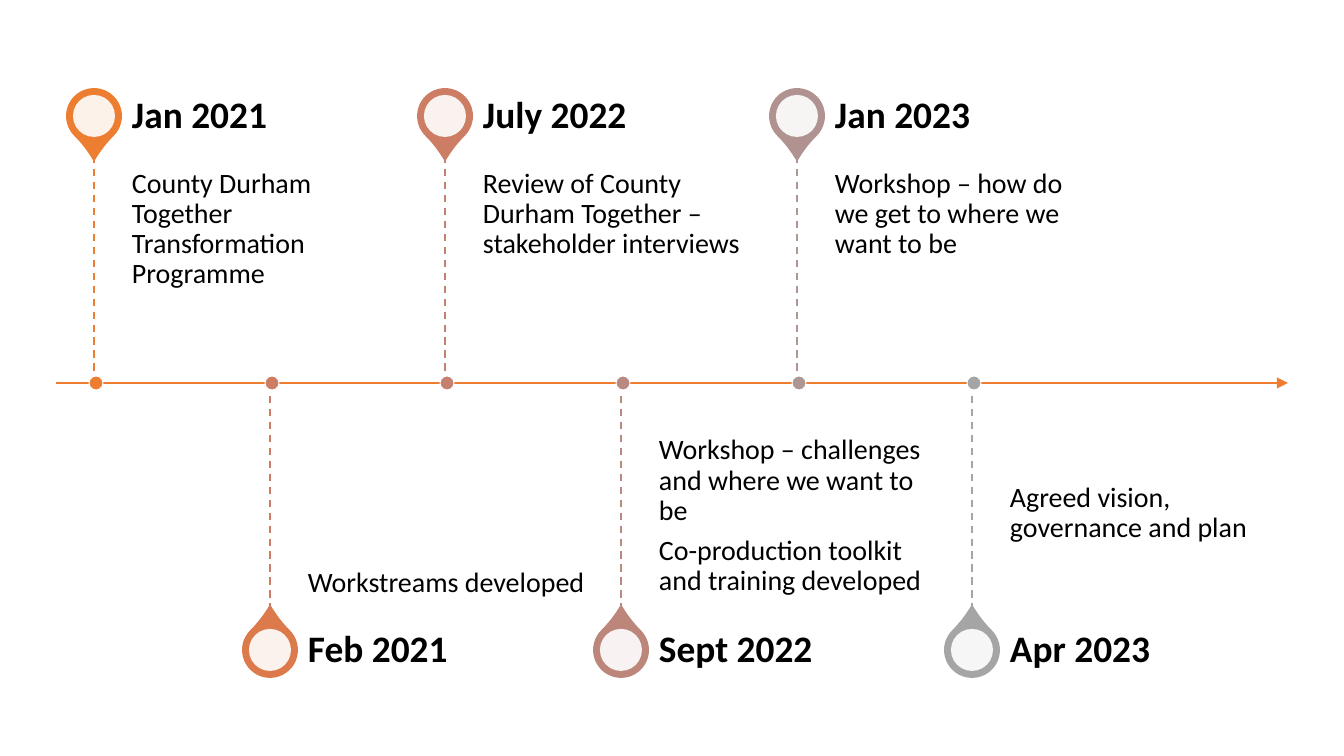
from pptx import Presentation
from pptx.dml.color import RGBColor
from pptx.enum.dml import MSO_LINE
from pptx.enum.shapes import MSO_CONNECTOR, MSO_SHAPE
from pptx.enum.text import MSO_ANCHOR
from pptx.oxml.ns import qn
from pptx.util import Pt
from lxml import etree

LINE, DASH = MSO_CONNECTOR.STRAIGHT, MSO_LINE.DASH
OVAL, TEAR = MSO_SHAPE.OVAL, MSO_SHAPE.TEAR
TOP, MIDDLE, BOTTOM = MSO_ANCHOR.TOP, MSO_ANCHOR.MIDDLE, MSO_ANCHOR.BOTTOM

W, H = 1344, 756
SCALE = 9144000 / W
FONT = "Calibri"
COLORS = {
    "text": "000000", "white": "FFFFFF", "axis": "ED7D31",
    "pin": ["ED7D31", "DC7A4B", "CC7D64", "BD867B", "B09391", "A5A5A5"],
    "stem": ["ED7D31", "CC7D64", "C48170", "B98A82", "AE9694", "A5A5A5"],
}

AXIS_Y, FIRST_X, STEP = 383, 94, 175.7
HEAD_H, STEM_H, TEXT_W, TEXT_DX = 80, 227, 278, 38
PIN, HOLE, DOT = 54, 42, 14

# date, paragraphs, extra space below the text
MILESTONES = [
    ("Jan 2021", ["County Durham Together Transformation Programme"], 0),
    ("Feb 2021", ["Workstreams developed"], 0),
    ("July 2022", ["Review of County Durham Together – stakeholder interviews"], 0),
    ("Sept 2022", ["Workshop – challenges and where we want to be",
                   "Co-production toolkit and training developed"], 0),
    ("Jan 2023", ["Workshop – how do we get to where we want to be"], 0),
    ("Apr 2023", ["Agreed vision, governance and plan"], 80),
]


def px(n):
    return round(n * SCALE)


def rgb(color):
    return RGBColor.from_string(color)


def add_line(s, start, end, color, width):
    sp = s.shapes.add_connector(LINE, *map(px, (*start, *end)))
    sp.line.color.rgb = rgb(color)
    sp.line.width = Pt(width)
    etree.SubElement(sp._element.spPr, qn("a:effectLst"))
    return sp


def add_centred(s, kind, cx, cy, size, fill, line=None, width=1):
    """Add a filled shape of equal sides around a centre point."""
    box = (cx - size / 2, cy - size / 2, size, size)
    sp = s.shapes.add_shape(kind, *map(px, box))
    sp.shadow.inherit = False
    sp.fill.solid()
    sp.fill.fore_color.rgb = rgb(fill)
    if line:
        sp.line.color.rgb = rgb(line)
        sp.line.width = Pt(width)
    else:
        sp.line.fill.background()
    return sp


def add_text(s, box, paragraphs, size, bold, anchor, insets):
    tf = s.shapes.add_textbox(*map(px, box)).text_frame
    left, top, right, bottom = map(px, insets)
    frame = {"word_wrap": True, "vertical_anchor": anchor, "margin_left": left,
             "margin_top": top, "margin_right": right, "margin_bottom": bottom}
    for name, value in frame.items():
        setattr(tf, name, value)
    for i, text in enumerate(paragraphs):
        p = tf.paragraphs[0] if i == 0 else tf.add_paragraph()
        p.line_spacing = 0.9
        p.space_after = Pt(size * 0.35)
        r = p.add_run()
        r.text = text
        for name, value in {"name": FONT, "size": Pt(size), "bold": bold}.items():
            setattr(r.font, name, value)
        r.font.color.rgb = rgb(COLORS["text"])


def add_axis(s, left, right, y):
    sp = add_line(s, (left, y), (right, y), COLORS["axis"], 1.5)
    etree.SubElement(sp.line._get_or_add_ln(), qn("a:tailEnd"), type="triangle")


def add_pin(s, cx, cy, rotation, color):
    sp = add_centred(s, TEAR, cx, cy, PIN, color, color)
    sp.adjustments[0] = 1.15
    sp.rotation = rotation
    hole = add_centred(s, OVAL, cx, cy, HOLE, COLORS["white"])
    fill = hole._element.spPr.find(qn("a:solidFill"))
    etree.SubElement(fill[0], qn("a:alpha"), val="90000")


def add_milestone(s, x, y, above, milestone, pin_color, stem_color):
    """Place a dated pin above or below the axis point (x, y)."""
    date, paragraphs, lift = milestone
    if above:
        text_y, head_y, stem_end = y - STEM_H, y - STEM_H - HEAD_H, y - STEM_H
        rotation, anchor, insets = 135, TOP, (0, 13, 13, 21)
    else:
        text_y, head_y, stem_end = y, y + STEM_H, y + STEM_H
        rotation, anchor, insets = 315, BOTTOM, (0, 21, 0, 13 + lift)
    text_x = x + TEXT_DX
    add_pin(s, x, head_y + HEAD_H / 2, rotation, pin_color)
    add_text(s, (text_x, text_y, TEXT_W, STEM_H), paragraphs, 15, False, anchor, insets)
    add_text(s, (text_x, head_y, TEXT_W, HEAD_H), [date], 20, True, MIDDLE, (0, 0, 19, 0))
    stem = add_line(s, (x, min(y, stem_end)), (x, max(y, stem_end)), stem_color, 1)
    stem.line.dash_style = DASH
    add_centred(s, OVAL, x + 2, y, DOT, stem_color, COLORS["white"], 0.5)


def main():
    prs = Presentation()
    prs.slide_width, prs.slide_height = px(W), px(H)
    s = prs.slides.add_slide(prs.slide_layouts[6])
    add_axis(s, 56, 1288, AXIS_Y)
    rows = zip(MILESTONES, COLORS["pin"], COLORS["stem"])
    for i, (milestone, pin_color, stem_color) in enumerate(rows):
        x = FIRST_X + round(i * STEP)
        add_milestone(s, x, AXIS_Y, i % 2 == 0, milestone, pin_color, stem_color)
    prs.save("out.pptx")


if __name__ == "__main__":
    main()
